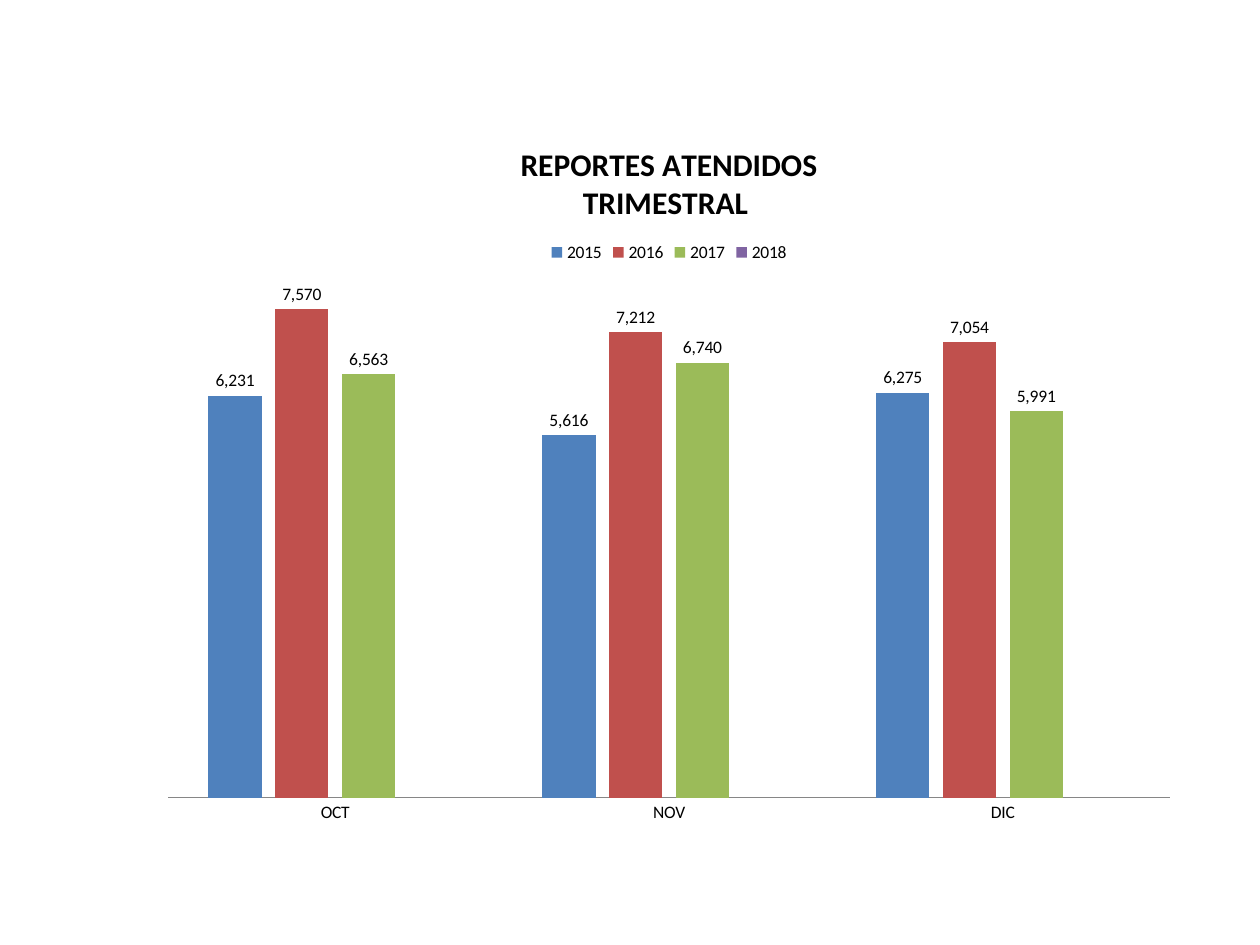
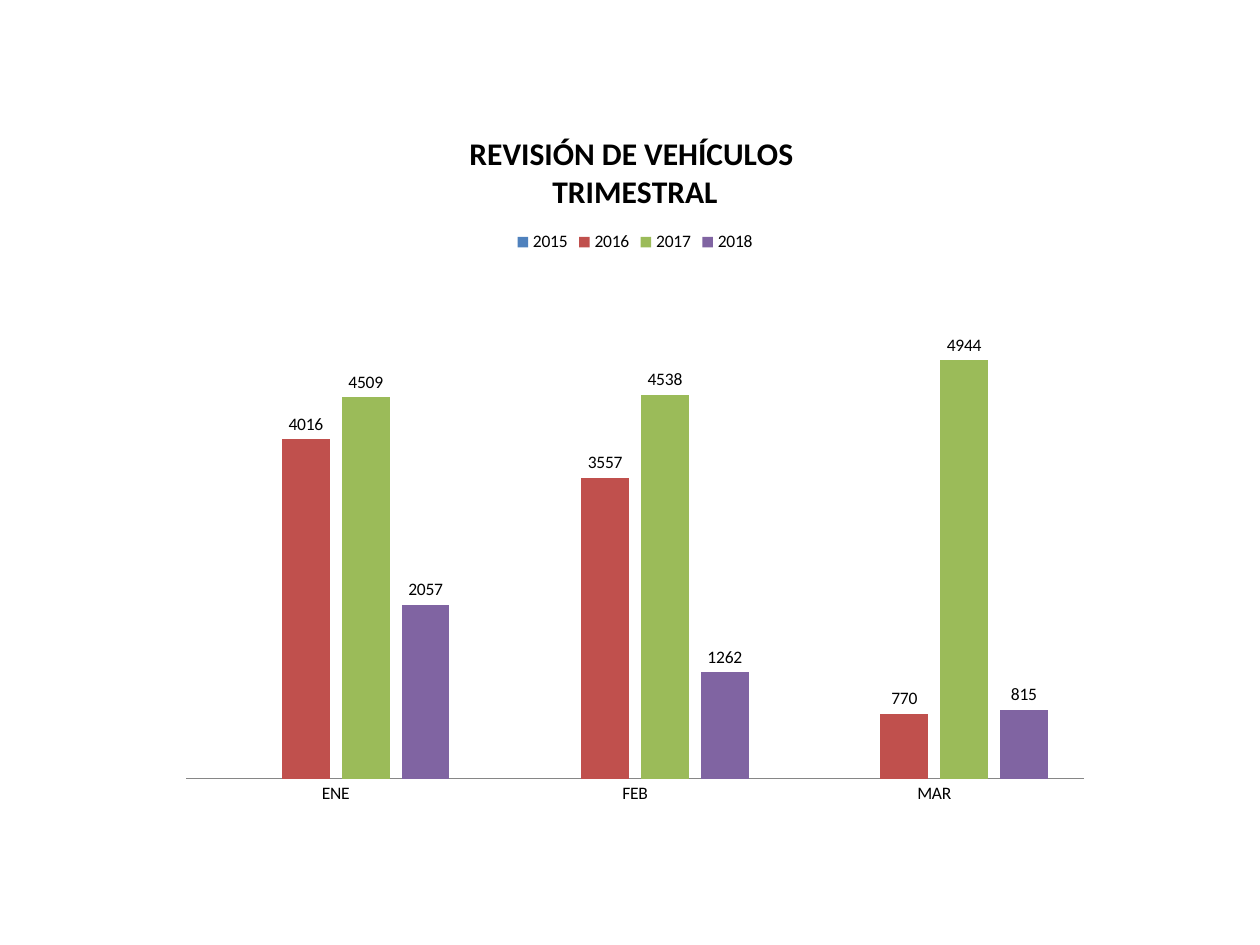
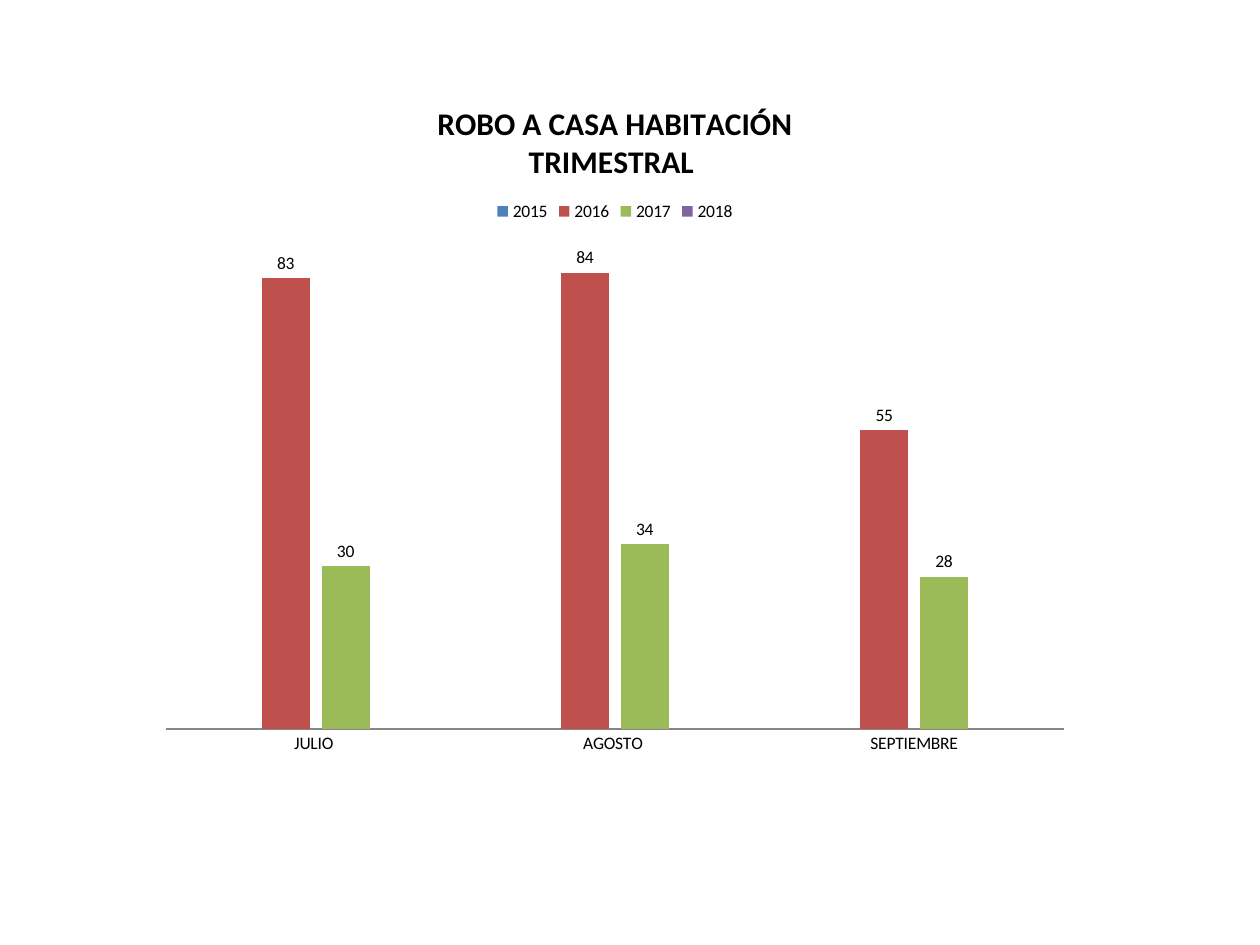
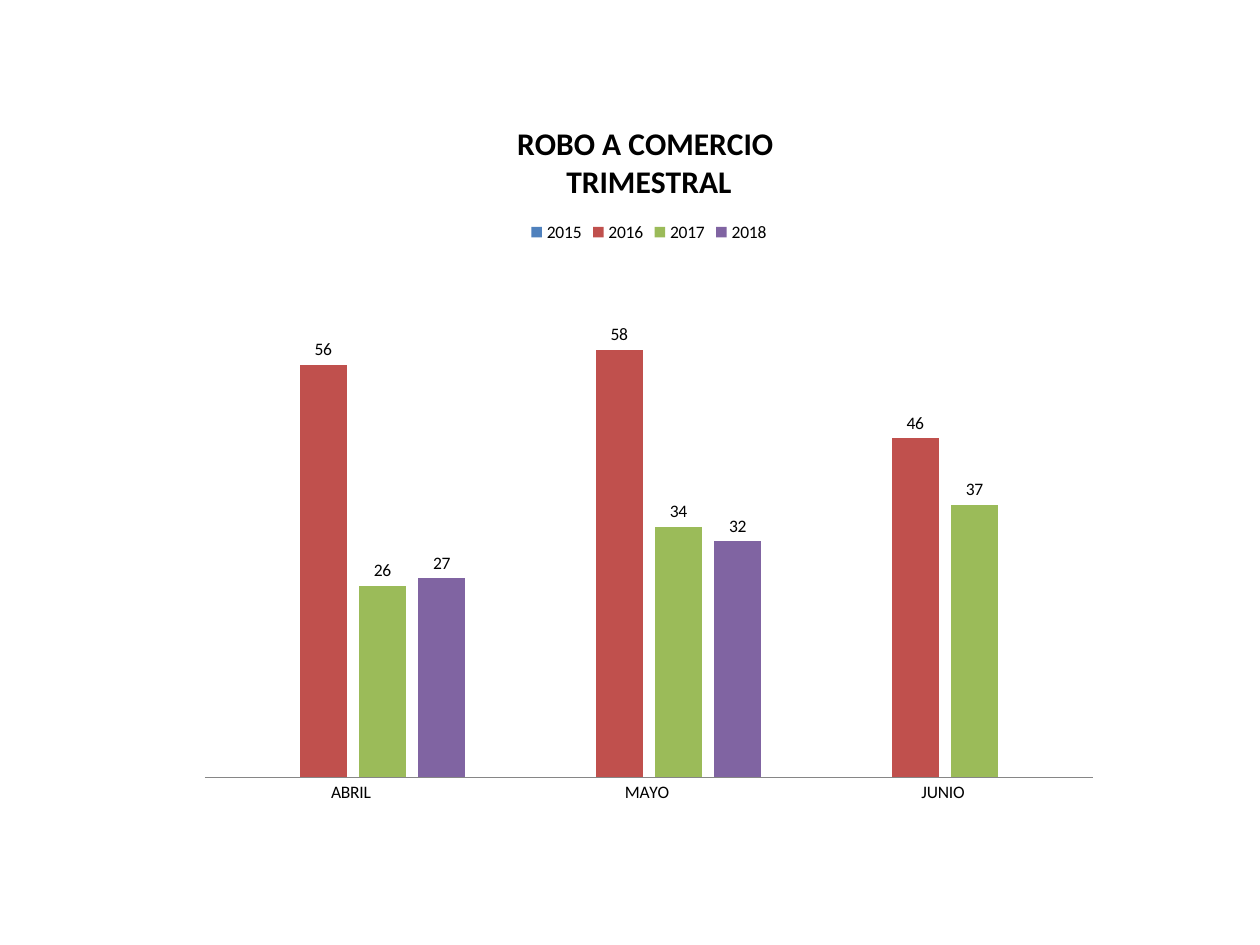
from dataclasses import dataclass

from pptx import Presentation
from pptx.chart.data import CategoryChartData
from pptx.dml.color import RGBColor
from pptx.enum.chart import XL_CHART_TYPE, XL_LABEL_POSITION, XL_LEGEND_POSITION, XL_TICK_MARK
from pptx.util import Inches, Pt


@dataclass(frozen=True)
class Theme:
    font: str = "Calibri"
    text: str = "000000"
    background: str = "FFFFFF"
    axis: str = "868686"
    series: tuple = ("4F81BD", "C0504D", "9BBB59", "8064A2")
    title_size: int = 18
    body_size: int = 10
    axis_width: float = 0.75
    gap_width: int = 150
    overlap: int = -25


@dataclass(frozen=True)
class QuarterReport:
    box: tuple
    title: str
    months: tuple
    values: dict
    maximum: int
    number_format: str = "General"


THEME = Theme()
YEARS = ("2015", "2016", "2017", "2018")
NO_VALUES = (None, None, None)

REPORTS = (
    QuarterReport(
        box=(1.17, 0.94, 8.28, 5.7),
        title="REPORTES ATENDIDOS\nTRIMESTRAL ",
        months=("OCT", "NOV", "DIC"),
        values={
            "2015": (6231, 5616, 6275),
            "2016": (7570, 7212, 7054),
            "2017": (6563, 6740, 5991),
        },
        maximum=8000,
        number_format="#,##0",
    ),
    QuarterReport(
        box=(1.33, 0.86, 7.42, 5.63),
        title="REVISIÓN DE VEHÍCULOS \nTRIMESTRAL",
        months=("ENE", "FEB", "MAR"),
        values={
            "2016": (4016, 3557, 770),
            "2017": (4509, 4538, 4944),
            "2018": (2057, 1262, 815),
        },
        maximum=6000,
    ),
    QuarterReport(
        box=(1.17, 0.62, 7.42, 5.47),
        title="ROBO A CASA HABITACIÓN\nTRIMESTRAL ",
        months=("JULIO ", "AGOSTO ", "SEPTIEMBRE"),
        values={"2016": (83, 84, 55), "2017": (30, 34, 28)},
        maximum=90,
    ),
    QuarterReport(
        box=(1.48, 0.78, 7.34, 5.7),
        title="ROBO A COMERCIO \nTRIMESTRAL",
        months=("ABRIL ", "MAYO ", "JUNIO "),
        values={
            "2016": (56, 58, 46),
            "2017": (26, 34, 37),
            "2018": (27, 32, None),
        },
        maximum=70,
    ),
)


def format_font(font, size=THEME.body_size, color=THEME.text, bold=False):
    font.name = THEME.font
    font.size = Pt(size)
    font.bold = bold
    font.color.rgb = RGBColor.from_string(color)


def write_text(text_frame, text, **text_format):
    text_frame.text = text
    for paragraph in text_frame.paragraphs:
        format_font(paragraph.font, **text_format)
        for run in paragraph.runs:
            format_font(run.font, **text_format)


def style_axes(chart, maximum):
    months_axis = chart.category_axis
    months_axis.major_tick_mark = XL_TICK_MARK.NONE
    months_axis.minor_tick_mark = XL_TICK_MARK.NONE
    months_axis.has_major_gridlines = False
    months_axis.format.line.color.rgb = RGBColor.from_string(THEME.axis)
    months_axis.format.line.width = Pt(THEME.axis_width)

    value_axis = chart.value_axis
    value_axis.has_major_gridlines = False
    value_axis.minimum_scale = 0
    value_axis.maximum_scale = maximum
    value_axis.visible = False


def style_columns(plot, number_format):
    plot.vary_by_categories = False
    plot.gap_width = THEME.gap_width
    plot.overlap = THEME.overlap
    for series, color in zip(plot.series, THEME.series):
        series.invert_if_negative = False
        series.format.fill.solid()
        series.format.fill.fore_color.rgb = RGBColor.from_string(color)
        labels = series.data_labels
        labels.show_value = True
        labels.number_format = number_format
        labels.number_format_is_linked = False
        labels.position = XL_LABEL_POSITION.OUTSIDE_END
        format_font(labels.font)


def add_quarter_chart(slide, report):
    chart_data = CategoryChartData(number_format=report.number_format)
    chart_data.categories = report.months
    for year in YEARS:
        chart_data.add_series(year, report.values.get(year, NO_VALUES))

    left, top, width, height = (Inches(length) for length in report.box)
    chart = slide.shapes.add_chart(
        XL_CHART_TYPE.COLUMN_CLUSTERED, left, top, width, height, chart_data
    ).chart
    format_font(chart.font)
    chart.has_title = True
    write_text(chart.chart_title.text_frame, report.title, size=THEME.title_size, bold=True)
    chart.has_legend = True
    chart.legend.position = XL_LEGEND_POSITION.TOP
    chart.legend.include_in_layout = False
    style_axes(chart, report.maximum)
    style_columns(chart.plots[0], report.number_format)


def add_report_slide(presentation, report):
    slide = presentation.slides.add_slide(presentation.slide_layouts[6])
    slide.background.fill.solid()
    slide.background.fill.fore_color.rgb = RGBColor.from_string(THEME.background)
    add_quarter_chart(slide, report)


def main():
    presentation = Presentation()
    presentation.slide_width = Inches(10)
    presentation.slide_height = Inches(7.5)
    for report in REPORTS:
        add_report_slide(presentation, report)
    presentation.save("out.pptx")


if __name__ == "__main__":
    main()
